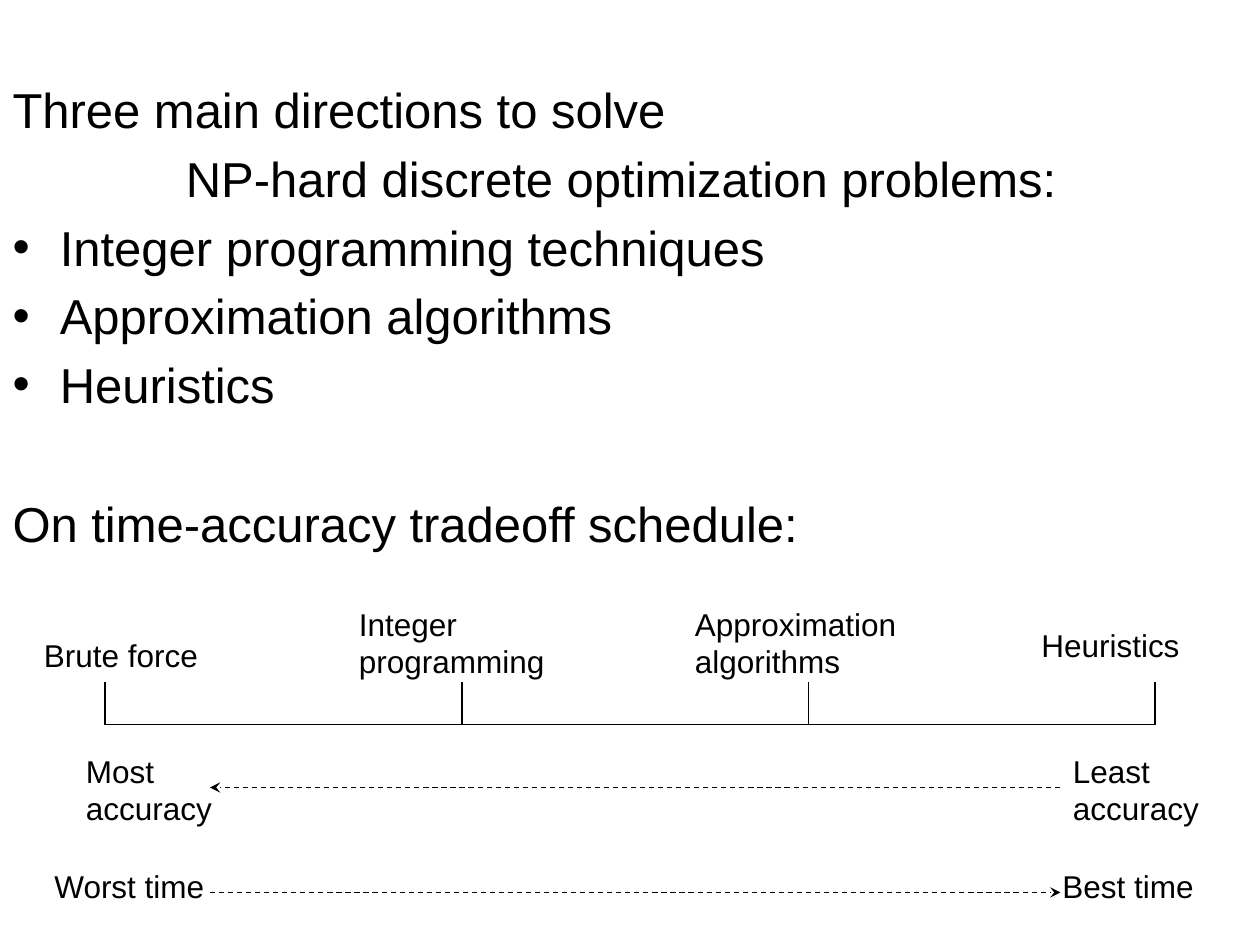
import pptx
import pptx.dml.color
import pptx.enum.dml
import pptx.enum.shapes
import pptx.enum.text
import pptx.oxml
import pptx.oxml.ns
import pptx.util

PX = 914400 // 120
COLORS = {"text": "000000", "line": "000000", "background": "FFFFFF"}
FONT = "Arial"


def px(n):
    return pptx.util.Emu(n * PX)


def rgb(name):
    return pptx.dml.color.RGBColor.from_string(COLORS[name])


def add_xml(parent, tag, attrs=""):
    ns = pptx.oxml.ns.nsdecls("a")
    parent.append(pptx.oxml.parse_xml(f"<a:{tag} {ns} {attrs}/>"))


def write_text(p, text, size=18, color="text", bullet=True, indent=0, before=None):
    r = p.add_run()
    r.text = text
    r.font.name = FONT
    r.font.size = pptx.util.Pt(size)
    r.font.color.rgb = rgb(color)
    if before is not None:
        p.space_before = pptx.util.Pt(before)
    if not bullet:
        pPr = p._p.get_or_add_pPr()
        pPr.set("marL", str(px(indent)))
        pPr.set("indent", "0")
        add_xml(pPr, "buNone")


def add_label(s, text, left, top, width, height):
    sp = s.shapes.add_textbox(px(left), px(top), px(width), px(height))
    tf = sp.text_frame
    tf.word_wrap = True
    tf.auto_size = pptx.enum.text.MSO_AUTO_SIZE.SHAPE_TO_FIT_TEXT
    write_text(tf.paragraphs[0], text)


def add_line(s, x1, y1, x2, y2, arrow=False):
    straight = pptx.enum.shapes.MSO_CONNECTOR.STRAIGHT
    c = s.shapes.add_connector(straight, px(x1), px(y1), px(x2), px(y2))
    c.line.color.rgb = rgb("line")
    c.line.width = pptx.util.Pt(0.75)
    if arrow:
        c.line.dash_style = pptx.enum.dml.MSO_LINE.DASH
        add_xml(c.line._get_or_add_ln(), "tailEnd", 'type="stealth"')
    add_xml(c._element.spPr, "effectLst")


def fill_directions(s, left, top, width, height):
    body = s.placeholders[1]
    body.left, body.top, body.width, body.height = map(px, (left, top, width, height))
    tf = body.text_frame
    lines = [
        ("Three main directions to solve", {"bullet": False}),
        ("NP-hard discrete optimization problems:", {"bullet": False, "indent": 165}),
        ("Integer programming techniques", {}),
        ("Approximation algorithms", {}),
        ("Heuristics", {}),
        ("On time-accuracy tradeoff schedule:", {"bullet": False, "before": 46}),
    ]
    for i, (text, fmt) in enumerate(lines):
        p = tf.add_paragraph() if i else tf.paragraphs[0]
        write_text(p, text, size=28, **fmt)


def draw_scale(s, left, top, width, height):
    base = top + height
    tick = 40
    add_line(s, left, base, left + width, base)
    methods = [
        ("Brute force", 0, -70, 30, 180, 48),
        ("Integer programming", 340, -110, 0, 280, 84),
        ("Approximation algorithms", 670, -120, 0, 260, 84),
        ("Heuristics", 1000, -120, 20, 180, 48),
    ]
    for text, x, dx, dy, w, h in methods:
        add_line(s, left + x, base, left + x, base - tick)
        add_label(s, text, left + x + dx, top + dy, w, h)


def draw_tradeoffs(s, left, top, width, height):
    right = left + width
    add_line(s, right, top, left, top, arrow=True)
    add_label(s, "Most accuracy", left - 130, top - 40, 160, 84)
    add_label(s, "Least accuracy", right, top - 40, 160, 84)
    bottom = top + height
    add_line(s, left, bottom, right, bottom, arrow=True)
    add_label(s, "Worst time", left - 160, bottom - 30, 200, 48)
    add_label(s, "Best time", right - 10, bottom - 30, 200, 48)


def main():
    prs = pptx.Presentation()
    prs.slide_width, prs.slide_height = px(1200), px(900)
    s = prs.slides.add_slide(prs.slide_layouts[1])
    s.background.fill.solid()
    s.background.fill.fore_color.rgb = rgb("background")
    title = s.shapes.title._element
    title.getparent().remove(title)
    fill_directions(s, 0, 70, 1200, 830)
    draw_scale(s, 100, 570, 1000, 120)
    draw_tradeoffs(s, 200, 750, 810, 100)
    prs.save("out.pptx")


if __name__ == "__main__":
    main()
